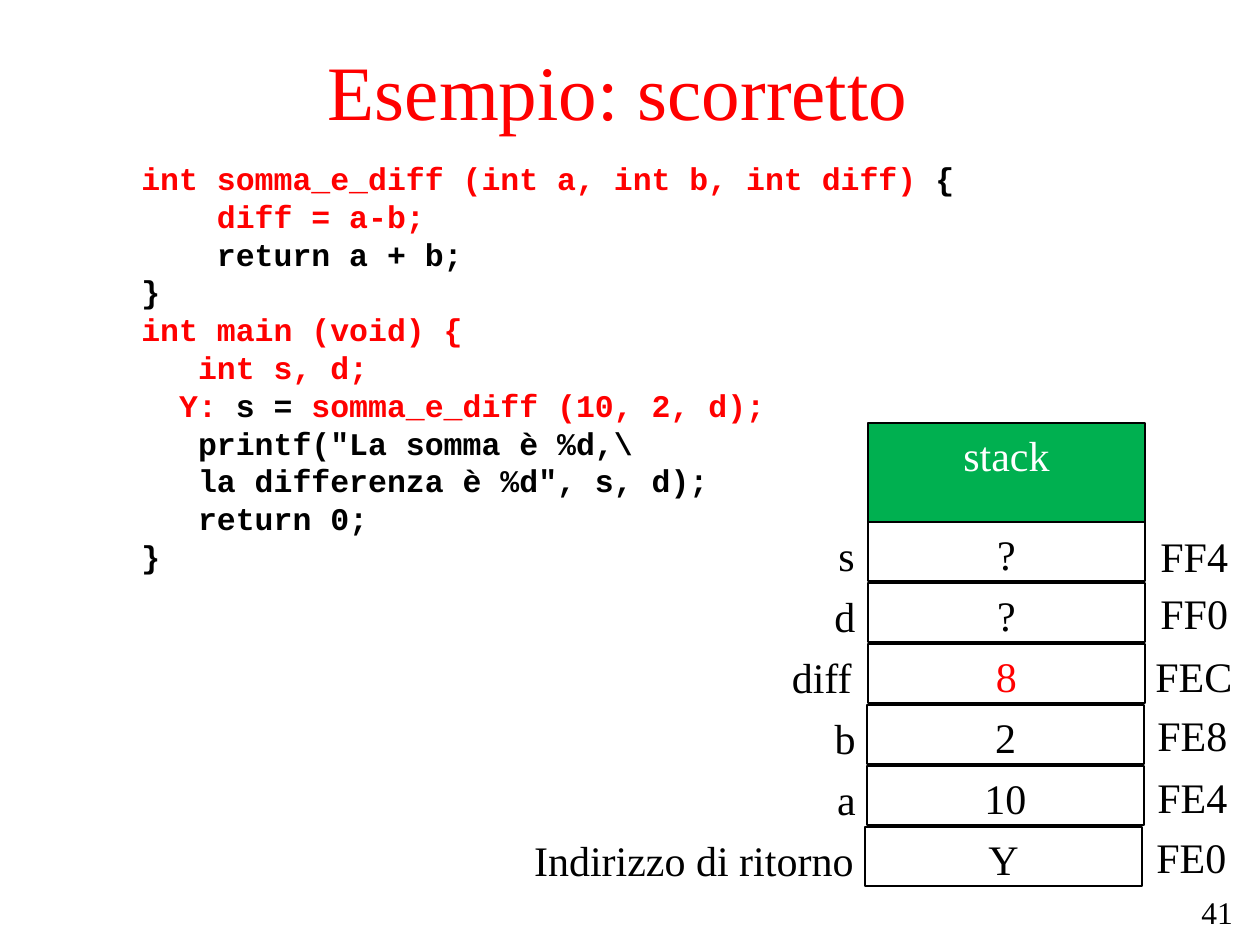
"""Build the slide on a wrong pass-by-value example and its stack."""
from dataclasses import dataclass

import pptx
import pptx.dml.color
import pptx.enum.shapes
import pptx.enum.text
import pptx.util

EMU_PER_PX = 914400 / 126
ALIGN = pptx.enum.text.PP_ALIGN
ANCHOR = pptx.enum.text.MSO_ANCHOR


@dataclass(frozen=True)
class Theme:
    black: str = "000000"
    red: str = "FF0000"
    green: str = "00B050"
    white: str = "FFFFFF"
    body_font: str = "Times New Roman"
    code_font: str = "Courier New"
    title_size: int = 44
    stack_size: int = 24
    code_size: int = 18
    number_size: int = 18
    code_leading: float = 21.6
    border: float = 0.75


@dataclass(frozen=True)
class Box:
    left: int
    top: int
    width: int
    height: int


@dataclass(frozen=True)
class CodeLine:
    indent: int
    snippets: tuple[tuple[str, str], ...]


@dataclass(frozen=True)
class StackRow:
    name: str
    value: str
    address: str
    cell_left: int
    name_width: int
    name_right: int
    address_left: int
    address_top: int
    color: str


THEME = Theme()
RED, BLACK = THEME.red, THEME.black

CODE = (
    CodeLine(0, (("int somma_e_diff (int a, int b, int diff)", RED), (" {", BLACK))),
    CodeLine(4, (("diff = a-b;", RED),)),
    CodeLine(4, (("return a + b;", BLACK),)),
    CodeLine(0, (("}", BLACK),)),
    CodeLine(0, (("int main (void) {", RED),)),
    CodeLine(3, (("int s, d;", RED),)),
    CodeLine(2, (("Y: ", RED), ("s = ", BLACK), ("somma_e_diff (10, 2, d);", RED))),
    CodeLine(3, (('printf("La somma è %d,\\', BLACK),)),
    CodeLine(3, (('la differenza è %d", s, d);', BLACK),)),
    CodeLine(3, (("return 0;", BLACK),)),
    CodeLine(0, (("}", BLACK),)),
)
CODE_MARGIN = 126
CODE_TOP_INSET = 53
CHARACTER_PT = 0.6 * THEME.code_size

STACK = (
    StackRow("s", "?", "FF4", 868, 48, 867, 1148, 524, BLACK),
    StackRow("d", "?", "FF0", 868, 45, 867, 1148, 581, BLACK),
    StackRow("diff", "8", "FEC", 868, 107, 864, 1143, 644, RED),
    StackRow("b", "2", "FE8", 867, 83, 868, 1145, 703, BLACK),
    StackRow("a", "10", "FE4", 867, 83, 868, 1145, 765, BLACK),
    StackRow("Indirizzo di ritorno", "Y", "FE0", 865, 359, 866, 1144, 825, BLACK),
)
STACK_TOP, ROW_PITCH = 522, 61
CELL_WIDTH, CELL_HEIGHT, ADDRESS_WIDTH = 277, 59, 112


def px(length: int) -> pptx.util.Emu:
    """Turn pixels into EMU."""
    return pptx.util.Emu(round(length * EMU_PER_PX))


def rgb(color: str) -> pptx.dml.color.RGBColor:
    """Turn a hex string into a colour."""
    return pptx.dml.color.RGBColor.from_string(color)


def place(box: Box) -> tuple[pptx.util.Emu, ...]:
    """Give the position and size of a box in EMU."""
    return px(box.left), px(box.top), px(box.width), px(box.height)


def write(frame, text: str, size: int, color: str, align, anchor=ANCHOR.TOP, wrap: bool = True) -> None:
    """Write one line in the body font."""
    frame.word_wrap = wrap
    frame.vertical_anchor = anchor
    paragraph = frame.paragraphs[0]
    paragraph.text = text
    paragraph.alignment = align
    paragraph.font.name = THEME.body_font
    paragraph.font.size = pptx.util.Pt(size)
    paragraph.font.color.rgb = rgb(color)


def draw_label(slide, box: Box, text: str, size: int, color: str, align, anchor=ANCHOR.TOP, wrap: bool = True) -> None:
    """Draw a line of text without an outline."""
    label = slide.shapes.add_textbox(*place(box))
    write(label.text_frame, text, size, color, align, anchor, wrap)


def draw_cell(slide, box: Box, text: str, color: str, fill: str | None = None) -> None:
    """Draw an outlined stack cell."""
    cell = slide.shapes.add_shape(pptx.enum.shapes.MSO_SHAPE.RECTANGLE, *place(box))
    cell.shadow.inherit = False
    if fill:
        cell.fill.solid()
        cell.fill.fore_color.rgb = rgb(fill)
    else:
        cell.fill.background()
    cell.line.color.rgb = rgb(BLACK)
    cell.line.width = pptx.util.Pt(THEME.border)
    write(cell.text_frame, text, THEME.stack_size, color, ALIGN.CENTER)


def draw_row(slide, row: StackRow, top: int) -> None:
    """Draw a stack cell with its name and address."""
    draw_cell(slide, Box(row.cell_left, top, CELL_WIDTH, CELL_HEIGHT), row.value, row.color)
    name_box = Box(row.name_right - row.name_width, top + 1, row.name_width, CELL_HEIGHT)
    draw_label(slide, name_box, row.name, THEME.stack_size, BLACK, ALIGN.RIGHT)
    address_box = Box(row.address_left, row.address_top, ADDRESS_WIDTH, CELL_HEIGHT)
    draw_label(slide, address_box, row.address, THEME.stack_size, BLACK, ALIGN.LEFT)


def draw_code(slide, box: Box, lines: tuple[CodeLine, ...]) -> None:
    """Draw the program, indenting each line by whole characters."""
    frame = slide.shapes.add_textbox(*place(box)).text_frame
    frame.word_wrap = True
    frame.margin_top = px(CODE_TOP_INSET)
    for index, line in enumerate(lines):
        paragraph = frame.add_paragraph() if index else frame.paragraphs[0]
        paragraph.line_spacing = pptx.util.Pt(THEME.code_leading)
        paragraph.font.name = THEME.code_font
        paragraph.font.size = pptx.util.Pt(THEME.code_size)
        paragraph.font.bold = True
        margin = px(CODE_MARGIN) + pptx.util.Pt(line.indent * CHARACTER_PT)
        properties = paragraph._p.get_or_add_pPr()
        properties.set("marL", str(margin))
        properties.set("indent", "0")
        for text, color in line.snippets:
            run = paragraph.add_run()
            run.text = text
            run.font.color.rgb = rgb(color)


def main() -> None:
    """Build and save the slide."""
    deck = pptx.Presentation()
    deck.slide_width, deck.slide_height = px(1260), px(945)
    slide = deck.slides.add_slide(deck.slide_layouts[6])
    draw_label(slide, Box(1189, 887, 58, 55), "41", THEME.number_size, BLACK, ALIGN.LEFT, wrap=False)
    draw_label(slide, Box(0, 0, 1236, 179), "Esempio: scorretto",
               THEME.title_size, RED, ALIGN.CENTER, ANCHOR.MIDDLE)
    draw_code(slide, Box(3, 106, 1233, 552), CODE)
    draw_cell(slide, Box(868, 423, CELL_WIDTH, 99), "stack", THEME.white, THEME.green)
    for index, row in enumerate(STACK):
        draw_row(slide, row, STACK_TOP + index * ROW_PITCH)
    deck.save("out.pptx")


if __name__ == "__main__":
    main()
